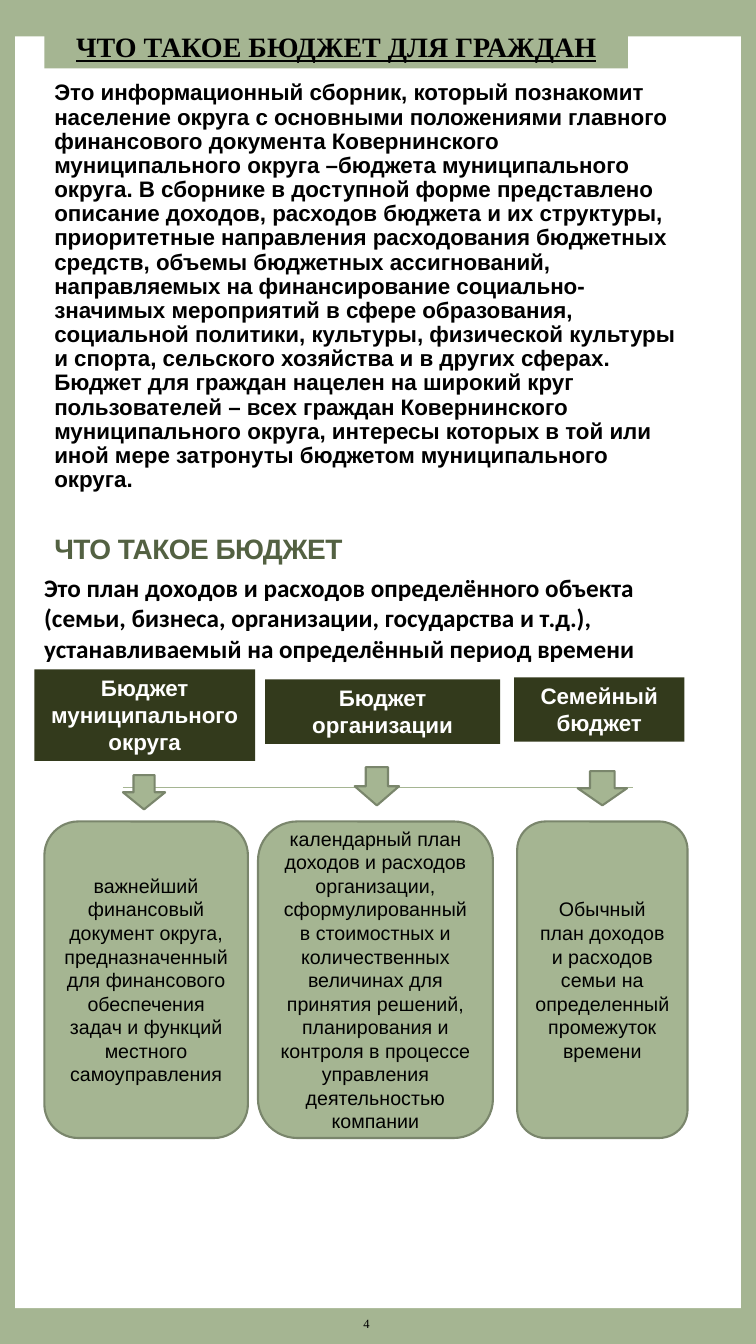
from lxml import etree
from pptx import Presentation
from pptx.dml.color import RGBColor
from pptx.enum.shapes import MSO_CONNECTOR, MSO_SHAPE
from pptx.enum.text import MSO_ANCHOR, MSO_AUTO_SIZE, PP_ALIGN
from pptx.oxml.ns import qn
from pptx.util import Pt

COLORS = {
    "sage": "A5B592",
    "sage_edge": "7A866C",
    "moss": "333A1C",
    "heading": "536142",
    "white": "FFFFFF",
    "black": "000000",
}


def add_block(kind, left, top, width, height, fill, edge=None):
    block = slide.shapes.add_shape(kind, Pt(left), Pt(top), Pt(width), Pt(height))
    block.shadow.inherit = False
    block.fill.solid()
    block.fill.fore_color.rgb = RGBColor.from_string(COLORS[fill])
    if edge:
        block.line.color.rgb = RGBColor.from_string(COLORS[edge])
        block.line.width = Pt(1.5)
    else:
        block.line.fill.background()
    return block


def write(shape, text, size=16, font="Arial", color="black", bold=True, underline=None,
          align=PP_ALIGN.LEFT, anchor=MSO_ANCHOR.TOP, spacing=None, tracking=None, margin=7.2):
    frame = shape.text_frame
    frame.text = text
    frame.word_wrap = True
    frame.auto_size = MSO_AUTO_SIZE.NONE
    frame.vertical_anchor = anchor
    frame.margin_left = frame.margin_right = Pt(margin)
    for paragraph in frame.paragraphs:
        paragraph.alignment = align
        paragraph.space_before = Pt(0)
        paragraph.line_spacing = spacing
        for run in paragraph.runs:
            run.font.size = Pt(size)
            run.font.name = font
            run.font.bold = bold
            run.font.underline = underline
            run.font.color.rgb = RGBColor.from_string(COLORS[color])
            if tracking is not None:
                run.font._element.set("spc", str(tracking))


prs = Presentation()
prs.slide_width, prs.slide_height = Pt(540), Pt(960)
slide = prs.slides.add_slide(prs.slide_layouts[5])

# Sage background, white page and thin rule
slide.background.fill.solid()
slide.background.fill.fore_color.rgb = RGBColor.from_string(COLORS["sage"])
add_block(MSO_SHAPE.RECTANGLE, 10.8, 25.9, 518.4, 908.6, "white")
rule = slide.shapes.add_connector(MSO_CONNECTOR.STRAIGHT, Pt(87.8), Pt(562.7), Pt(452.2), Pt(562.7))
rule.line.color.rgb = RGBColor.from_string(COLORS["sage"])
rule.line.width = Pt(0.79)
etree.SubElement(rule.element.spPr, qn("a:effectLst"))

# Title, raised above the white page
title = slide.shapes.title
slide.shapes.element.append(title.element)
title.left, title.top, title.width, title.height = Pt(31.7), Pt(8.6), Pt(416.9), Pt(40.3)
title.fill.solid()
title.fill.fore_color.rgb = RGBColor.from_string(COLORS["sage"])
write(title, "ЧТО ТАКОЕ БЮДЖЕТ ДЛЯ ГРАЖДАН", size=20, font="Times New Roman", underline=True,
      align=PP_ALIGN.CENTER, anchor=MSO_ANCHOR.BOTTOM, spacing=0.85)

# Introduction
intro = slide.shapes.add_textbox(Pt(31.7), Pt(54.7), Pt(465.1), Pt(318.2))
write(intro, (
    "Это информационный сборник, который познакомит население округа с основными "
    "положениями главного финансового документа Ковернинского муниципального округа "
    "–бюджета муниципального округа. В сборнике в доступной форме представлено описание "
    "доходов, расходов бюджета и их структуры, приоритетные направления расходования "
    "бюджетных средств, объемы бюджетных ассигнований, направляемых на финансирование "
    "социально-значимых мероприятий в сфере образования, социальной политики, культуры, "
    "физической культуры и спорта, сельского хозяйства и в других сферах. Бюджет для "
    "граждан нацелен на широкий круг пользователей – всех граждан Ковернинского "
    "муниципального округа, интересы которых в той или иной мере затронуты бюджетом "
    "муниципального округа."), spacing=0.9)

# Page number
page_number = slide.shapes.add_textbox(Pt(252.7), Pt(933.1), Pt(14.4), Pt(24.5))
write(page_number, "4", size=9, font="Times New Roman", bold=False,
      align=PP_ALIGN.RIGHT, anchor=MSO_ANCHOR.MIDDLE, margin=3)

# Definition of a budget
heading = add_block(MSO_SHAPE.RECTANGLE, 31.7, 367.2, 221, 40.3, "white")
write(heading, "ЧТО ТАКОЕ БЮДЖЕТ", size=20, color="heading",
      anchor=MSO_ANCHOR.BOTTOM, spacing=0.85, tracking=-40)
definition = slide.shapes.add_textbox(Pt(24.5), Pt(405.4), Pt(479.5), Pt(72.7))
write(definition, (
    "Это план доходов и расходов определённого объекта (семьи, бизнеса, организации, "
    "государства и т.д.), устанавливаемый на определённый период времени"),
    size=18, font="Calibri")

# Three kinds of budget: label box, arrow box, card left and width, meaning
budgets = [
    ("Бюджет муниципального округа", (24.5, 478.1, 157.7, 65.5),
     (87.8, 553.7, 30.2, 24.5), (31.7, 145.4),
     "важнейший финансовый документ округа, предназначенный для финансового "
     "обеспечения задач и функций местного самоуправления"),
    ("Бюджет организации", (189.4, 485.3, 167.8, 46.1),
     (253.4, 547.9, 31.7, 27.4), (184.3, 167.8),
     "календарный план доходов и расходов организации, сформулированный в стоимостных "
     "и количественных величинах для принятия решений, планирования и контроля в "
     "процессе управления деятельностью компании"),
    ("Семейный\nбюджет", (367.2, 483.8, 121.7, 46.1),
     (412.6, 550.8, 35.3, 24.5), (369.4, 121.7),
     "Обычный план доходов и расходов семьи на определенный промежуток времени"),
]
CARD_TOP, CARD_HEIGHT = 586.8, 226.1
for name, label_box, arrow_box, (card_left, card_width), meaning in budgets:
    label = add_block(MSO_SHAPE.RECTANGLE, *label_box, "moss")
    write(label, name, color="white", align=PP_ALIGN.CENTER)
    add_block(MSO_SHAPE.DOWN_ARROW, *arrow_box, "sage", "sage_edge")
    card = add_block(MSO_SHAPE.ROUNDED_RECTANGLE, card_left, CARD_TOP, card_width, CARD_HEIGHT,
                     "sage", "sage_edge")
    write(card, meaning, size=14, bold=False, align=PP_ALIGN.CENTER, anchor=MSO_ANCHOR.MIDDLE,
          margin=6.5)

prs.save("out.pptx")
